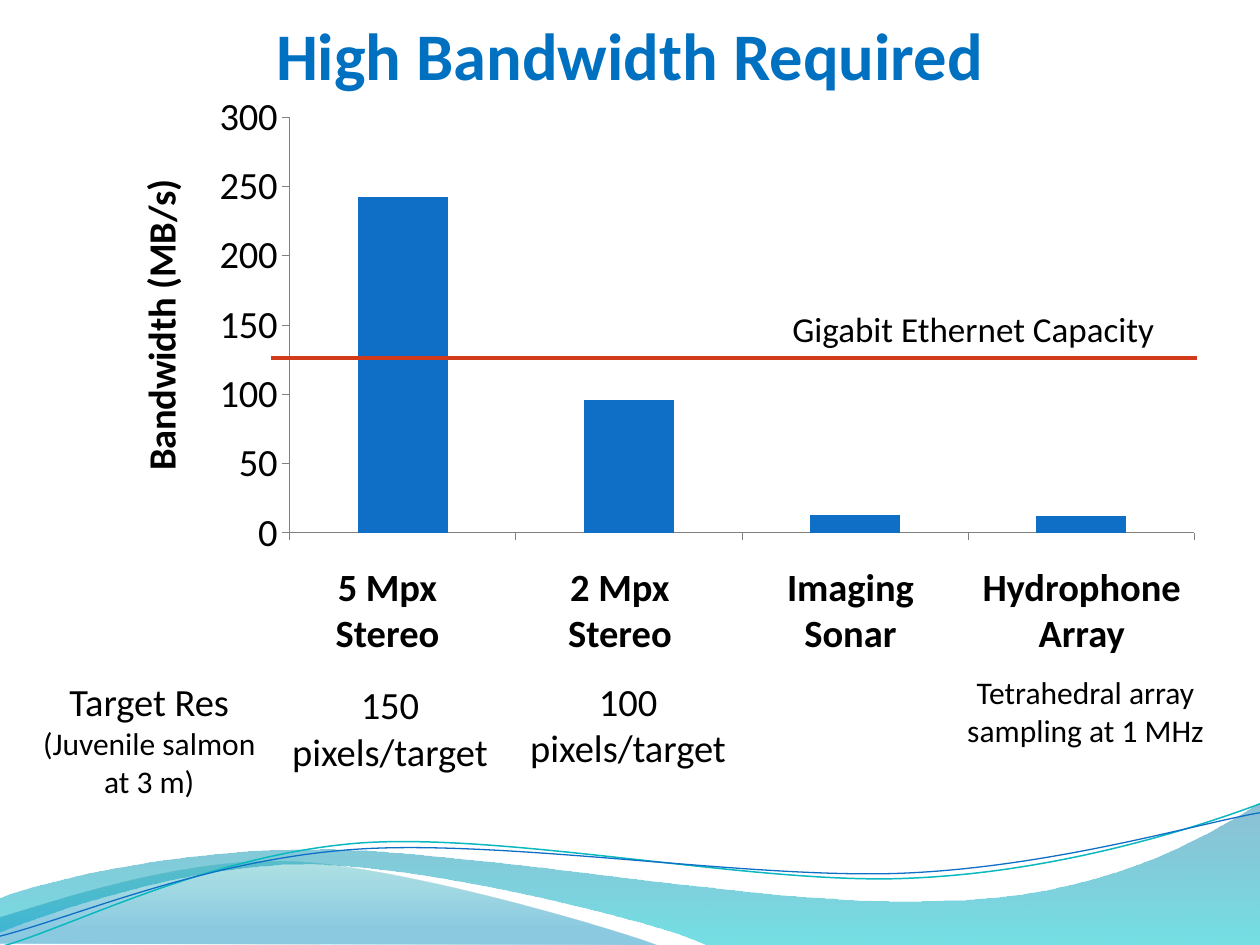
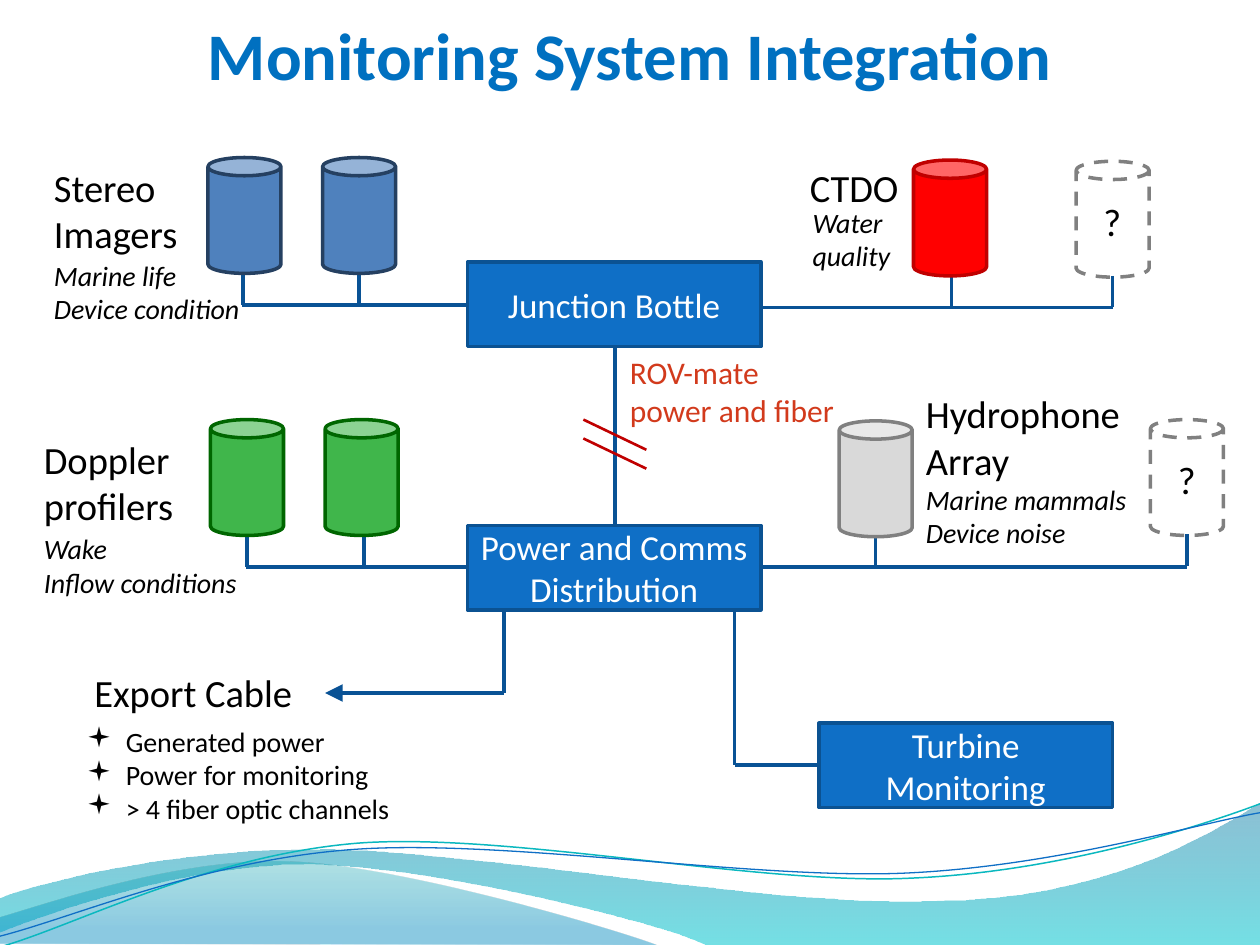
from itertools import islice
from lxml import etree
from pptx import Presentation
from pptx.chart.data import CategoryChartData
from pptx.dml.color import RGBColor
from pptx.enum.chart import XL_CHART_TYPE, XL_TICK_LABEL_POSITION, XL_TICK_MARK
from pptx.enum.dml import MSO_LINE
from pptx.enum.shapes import MSO_CONNECTOR, MSO_SHAPE
from pptx.enum.text import MSO_ANCHOR, MSO_AUTO_SIZE, PP_ALIGN
from pptx.oxml import parse_xml
from pptx.oxml.ns import nsdecls, qn
from pptx.util import Inches, Pt

COLORS = {
    "title": "0070C0", "text": "000000", "white": "FFFFFF", "axis": "808080",
    "blue": "0F6FC6", "box_edge": "0B5292", "wire": "095295", "accent": "D23A1C",
    "teal": "0AB8BF", "imager": "4F81BD", "imager_edge": "254061",
    "doppler": "40B64B", "doppler_edge": "006600", "ctdo": "FF0000",
    "dark_red": "C00000", "hydrophone": "D9D9D9", "gray": "808080",
    "deep": "0074A1", "aqua": "00C6CF", "sea": "00A1A9", "sky": "008BBF",
}
FONT = "Calibri"
LABEL = {"size": 22}
NOTE = {"size": 16, "italic": True}
BOX_SIZE = (2.33, 0.67)
CAN_SIZE = (0.58, 0.92)
CHART_BOX = (0.83, 0.67, 8.83, 3.83)

WAVES = [
    {"start": (10, 7.5), "closed": True, "angle": 90,
     "stops": [(0, "deep", 45), (100, "aqua", 55)],
     "steps": [(5.6, 7.5), (5.24, 7.32, 3.36, 6.86, 2.41, 6.86),
               (1.47, 6.86, 0.41, 7.24, 0, 7.4), (-0.01, 7.13),
               (0.16, 7.05, 1.3, 6.73, 2.54, 6.74),
               (3.78, 6.74, 6.18, 7.21, 7.43, 7.15),
               (8.71, 7.14, 9.54, 6.66, 10.01, 6.36)]},
    {"start": (5.21, 7.5), "closed": True, "angle": 90,
     "stops": [(0, "sea", 30), (80, "sky", 45)],
     "steps": [(4.9, 7.38, 3.18, 6.87, 2.31, 6.84),
               (1.44, 6.8, 0.38, 7.17, 0, 7.28), (0, 7.49)]},
    {"start": (10, 6.38), "closed": False, "line": ("teal", 0.85),
     "steps": [(9.52, 6.56, 8.42, 6.92, 7.23, 6.97),
               (6.04, 7.03, 4.07, 6.61, 2.87, 6.69),
               (1.67, 6.78, 0.61, 7.34, 0.02, 7.51)]},
    {"start": (10, 6.45), "closed": False, "line": ("blue", 0.75),
     "steps": [(9.53, 6.53, 8.36, 6.88, 7.17, 6.93),
               (5.97, 6.98, 4.02, 6.66, 2.83, 6.74),
               (1.64, 6.82, 0.59, 7.28, 0, 7.43)]},
]


def rgb(name):
    return RGBColor.from_string(COLORS[name])


def inches(values):
    return [Inches(v) for v in values]


def set_font(font, size=22, color="text", **fmt):
    values = {"name": FONT, "size": Pt(size), **fmt}
    for name, value in values.items():
        setattr(font, name, value)
    font.color.rgb = rgb(color)


def set_line(line, color, width):
    line.color.rgb = rgb(color)
    line.width = Pt(width)


def add_bullet(p):
    pPr = p._p.get_or_add_pPr()
    pPr.set("marL", str(Inches(0.31)))
    pPr.set("indent", str(-Inches(0.31)))
    etree.SubElement(pPr, qn("a:buFont")).set("typeface", "Wingdings")
    etree.SubElement(pPr, qn("a:buChar")).set("char", "▪")


def fill_text(tf, paragraphs, align=PP_ALIGN.LEFT, bullets=False, **fmt):
    for i, runs in enumerate(paragraphs):
        p = tf.paragraphs[0] if i == 0 else tf.add_paragraph()
        p.alignment = align
        if bullets:
            add_bullet(p)
        for text, extra in [(runs, {})] if isinstance(runs, str) else runs:
            r = p.add_run()
            r.text = text
            set_font(r.font, **{**fmt, **extra})


def add_text(s, box, *paragraphs, wrap=True, margin=None, **fmt):
    tf = s.shapes.add_textbox(*inches(box)).text_frame
    settings = {"word_wrap": wrap, "auto_size": MSO_AUTO_SIZE.SHAPE_TO_FIT_TEXT}
    if margin is not None:
        for side in ("left", "top", "right", "bottom"):
            settings[f"margin_{side}"] = Inches(margin)
    for name, value in settings.items():
        setattr(tf, name, value)
    fill_text(tf, paragraphs, **fmt)


def add_centered(s, box, *paragraphs, **fmt):
    add_text(s, box, *paragraphs, align=PP_ALIGN.CENTER, **fmt)


def add_line(s, start, end, color="wire", width=2, arrow=False):
    c = s.shapes.add_connector(MSO_CONNECTOR.STRAIGHT, *inches(start + end))
    set_line(c.line, color, width)
    if arrow:
        head = etree.SubElement(c.line._get_or_add_ln(), qn("a:headEnd"))
        for name, value in {"type": "triangle", "w": "lg", "len": "lg"}.items():
            head.set(name, value)
    etree.SubElement(c._element.spPr, qn("a:effectLst"))


def add_box(s, x, y, label):
    sp = s.shapes.add_shape(MSO_SHAPE.RECTANGLE, *inches((x, y) + BOX_SIZE))
    sp.shadow.inherit = False
    sp.fill.solid()
    sp.fill.fore_color.rgb = rgb("blue")
    set_line(sp.line, "box_edge", 2)
    tf = sp.text_frame
    tf.word_wrap = True
    tf.vertical_anchor = MSO_ANCHOR.MIDDLE
    fill_text(tf, [label], align=PP_ALIGN.CENTER, size=20, color="white")


def add_sensor(s, x, y, edge, drop_x, bus_y, fill=None):
    add_line(s, (drop_x, bus_y - 0.25), (drop_x, bus_y))
    sp = s.shapes.add_shape(MSO_SHAPE.CAN, *inches((x, y) + CAN_SIZE))
    sp.shadow.inherit = False
    set_line(sp.line, edge, 2)
    if fill:
        sp.fill.solid()
        sp.fill.fore_color.rgb = rgb(fill)
    else:
        sp.fill.background()
        sp.line.dash_style = MSO_LINE.DASH
        add_text(s, (x + 0.12, y + 0.24, 0.5, 0.47), "?", **LABEL)


def gradient(stops, angle):
    gs = "".join(
        f'<a:gs pos="{pos * 1000}"><a:srgbClr val="{COLORS[color]}">'
        f'<a:alpha val="{alpha * 1000}"/></a:srgbClr></a:gs>'
        for pos, color, alpha in stops)
    return parse_xml(f'<a:gradFill {nsdecls("a")} rotWithShape="1"><a:gsLst>{gs}</a:gsLst>'
                     f'<a:lin ang="{angle * 60000}" scaled="0"/></a:gradFill>')


def bend_segments(geometry, steps):
    lines = iter(list(geometry.iter(qn("a:lnTo"))))
    for step in steps:
        group = list(islice(lines, len(step) // 2))
        if len(group) == 3:
            curve = etree.Element(qn("a:cubicBezTo"))
            group[0].addprevious(curve)
            for segment in group:
                curve.append(segment[0])
                segment.getparent().remove(segment)


def add_wave(s, wave):
    points = [inches(step[i:i + 2]) for step in wave["steps"] for i in range(0, len(step), 2)]
    builder = s.shapes.build_freeform(*inches(wave["start"]))
    builder.add_line_segments(points, close=wave["closed"])
    sp = builder.convert_to_shape()
    sp.shadow.inherit = False
    geometry = sp._element.spPr.find(qn("a:custGeom"))
    bend_segments(geometry, wave["steps"])
    if wave["closed"]:
        sp.line.fill.background()
        geometry.addnext(gradient(wave["stops"], wave["angle"]))
    else:
        sp.fill.background()
        set_line(sp.line, *wave["line"])
    return sp


def add_waves_to_layout(s):
    tree = s.slide_layout.shapes._spTree
    for wave in WAVES:
        tree.append(add_wave(s, wave)._element)


def add_slide(prs, title):
    s = prs.slides.add_slide(prs.slide_layouts[6])
    add_centered(s, (0, 0.11, 10, 0.64), title, margin=0, size=38, color="title", bold=True)
    return s


def set_layout(parent, before, x, y, w=None, h=None):
    left, top, width, height = CHART_BOX
    place = {"x": (x - left) / width, "y": (y - top) / height}
    target = ""
    if w:
        place.update(w=w / width, h=h / height)
        target = '<c:layoutTarget val="inner"/>'
    modes = "".join(f'<c:{k}Mode val="edge"/>' for k in "xy")
    values = "".join(f'<c:{k} val="{v:.4f}"/>' for k, v in place.items())
    for old in parent.findall(qn("c:layout")):
        parent.remove(old)
    parent.find(qn(before)).addprevious(parse_xml(
        f'<c:layout {nsdecls("c")}><c:manualLayout>{target}{modes}{values}'
        f'</c:manualLayout></c:layout>'))


def add_bandwidth_chart(s):
    data = CategoryChartData()
    data.categories = ["1", "2", "3", "4"]
    data.add_series("Series 1", (242, 96, 13, 12))
    chart = s.shapes.add_chart(XL_CHART_TYPE.COLUMN_CLUSTERED, *inches(CHART_BOX), data).chart
    chart.has_legend = chart.has_title = False
    set_font(chart.font)
    plot = chart.plots[0]
    plot.gap_width = 150
    plot.vary_by_categories = False
    fill = plot.series[0].format.fill
    fill.solid()
    fill.fore_color.rgb = rgb("blue")
    for axis in (chart.category_axis, chart.value_axis):
        axis.has_major_gridlines = False
        axis.major_tick_mark = XL_TICK_MARK.OUTSIDE
        set_line(axis.format.line, "axis", 0.5)
    chart.category_axis.tick_label_position = XL_TICK_LABEL_POSITION.NONE
    value = chart.value_axis
    for name, number in {"minimum_scale": 0, "maximum_scale": 300, "major_unit": 50}.items():
        setattr(value, name, number)
    title = value.axis_title
    fill_text(title.text_frame, ["Bandwidth (MB/s)"], bold=True)
    body = title._element.find(".//" + qn("a:bodyPr"))
    body.set("rot", "-5400000")
    body.set("vert", "horz")
    set_layout(title._element, "c:overlay", 1.01, 1.37)
    area = chart._chartSpace.find(".//" + qn("c:plotArea"))
    set_layout(area, "c:barChart", 2.3, 0.93, 7.18, 3.3)


def bandwidth_slide(prs):
    s = add_slide(prs, "High Bandwidth Required")
    add_waves_to_layout(s)
    add_bandwidth_chart(s)
    for x, width, name in [(2.15, 1.85, "5 Mpx Stereo"), (4, 1.84, "2 Mpx Stereo"),
                           (6, 1.5, "Imaging Sonar"), (7.67, 1.83, "Hydrophone Array")]:
        add_centered(s, (x, 4.42, width, 0.84), name, bold=True)
    add_centered(s, (0.17, 5.33, 2.03, 1.08),
                 [("Target Res ", {}), ("(Juvenile salmon at 3 m)", {"size": 18})])
    add_centered(s, (2.19, 5.36, 1.81, 0.84), "150 pixels/target")
    add_line(s, (2.15, 2.84), (9.5, 2.84), "accent")
    add_text(s, (6.19, 2.39, 3.16, 0.44), "Gigabit Ethernet Capacity", wrap=False, size=20)
    add_centered(s, (4.08, 5.33, 1.81, 0.84), "100 pixels/target")
    add_centered(s, (7.57, 5.29, 2.09, 0.71), "Tetrahedral array sampling at 1 MHz", size=18)


def integration_slide(prs):
    s = add_slide(prs, "Monitoring System Integration")
    for start, end in [((6.5, 6.07), (5.83, 6.07)), ((5.83, 6.07), (5.83, 4.83)),
                       ((4.88, 4.17), (4.88, 2.75)), ((4, 5.5), (4, 4.83)),
                       ((1.92, 2.42), (3.7, 2.42)), ((6.05, 2.44), (8.83, 2.44)),
                       ((1.95, 4.5), (3.72, 4.5)), ((6.05, 4.5), (9.42, 4.5))]:
        add_line(s, start, end)
    add_line(s, (2.58, 5.5), (4, 5.5), arrow=True)
    for y in (3.33, 3.48):
        add_line(s, (4.63, y), (5.13, y + 0.24), "dark_red", 1.5)
    for x, y, label in [(6.5, 5.74, "Turbine Monitoring"),
                        (3.71, 4.17, "Power and Comms Distribution"),
                        (3.71, 2.08, "Junction Bottle")]:
        add_box(s, x, y, label)
    for sensor in [(1.65, 1.25, "imager_edge", 1.93, 2.42, "imager"),
                   (2.56, 1.25, "imager_edge", 2.85, 2.42, "imager"),
                   (1.67, 3.33, "doppler_edge", 1.96, 4.5, "doppler"),
                   (2.58, 3.33, "doppler_edge", 2.89, 4.5, "doppler"),
                   (7.25, 1.27, "dark_red", 7.55, 2.44, "ctdo"),
                   (8.54, 1.28, "gray", 8.83, 2.44),
                   (6.66, 3.34, "gray", 6.95, 4.5, "hydrophone"),
                   (9.13, 3.33, "gray", 9.42, 4.49)]:
        add_sensor(s, *sensor)
    for box, label in [((0.33, 1.25, 1.42, 0.84), "Stereo Imagers"),
                       ((0.25, 3.41, 1.25, 0.84), "Doppler profilers"),
                       ((6.33, 1.25, 1.42, 0.47), "CTDO"),
                       ((7.25, 3.05, 1.83, 0.84), "Hydrophone Array")]:
        add_text(s, box, label, **LABEL)
    add_text(s, (4.9, 2.75, 1.85, 0.71), "ROV-mate power and fiber", size=18, color="accent")
    add_text(s, (0.65, 5.26, 1.79, 0.47), "Export Cable", wrap=False, **LABEL)
    for box, *notes in [((0.33, 2, 1.75, 0.64), "Marine life", "Device condition"),
                        ((0.25, 4.17, 1.92, 0.64), "Wake", "Inflow conditions"),
                        ((6.35, 1.58, 0.92, 0.64), "Water quality"),
                        ((7.25, 3.78, 1.92, 0.64), "Marine mammals", "Device noise")]:
        add_text(s, box, *notes, **NOTE)
    add_text(s, (0.59, 5.7, 2.76, 0.91), "Generated power", "Power for monitoring",
             "> 4 fiber optic channels", bullets=True, size=16)


def main():
    prs = Presentation()
    prs.slide_width, prs.slide_height = inches((10, 7.5))
    bandwidth_slide(prs)
    integration_slide(prs)
    prs.save("out.pptx")


if __name__ == "__main__":
    main()
